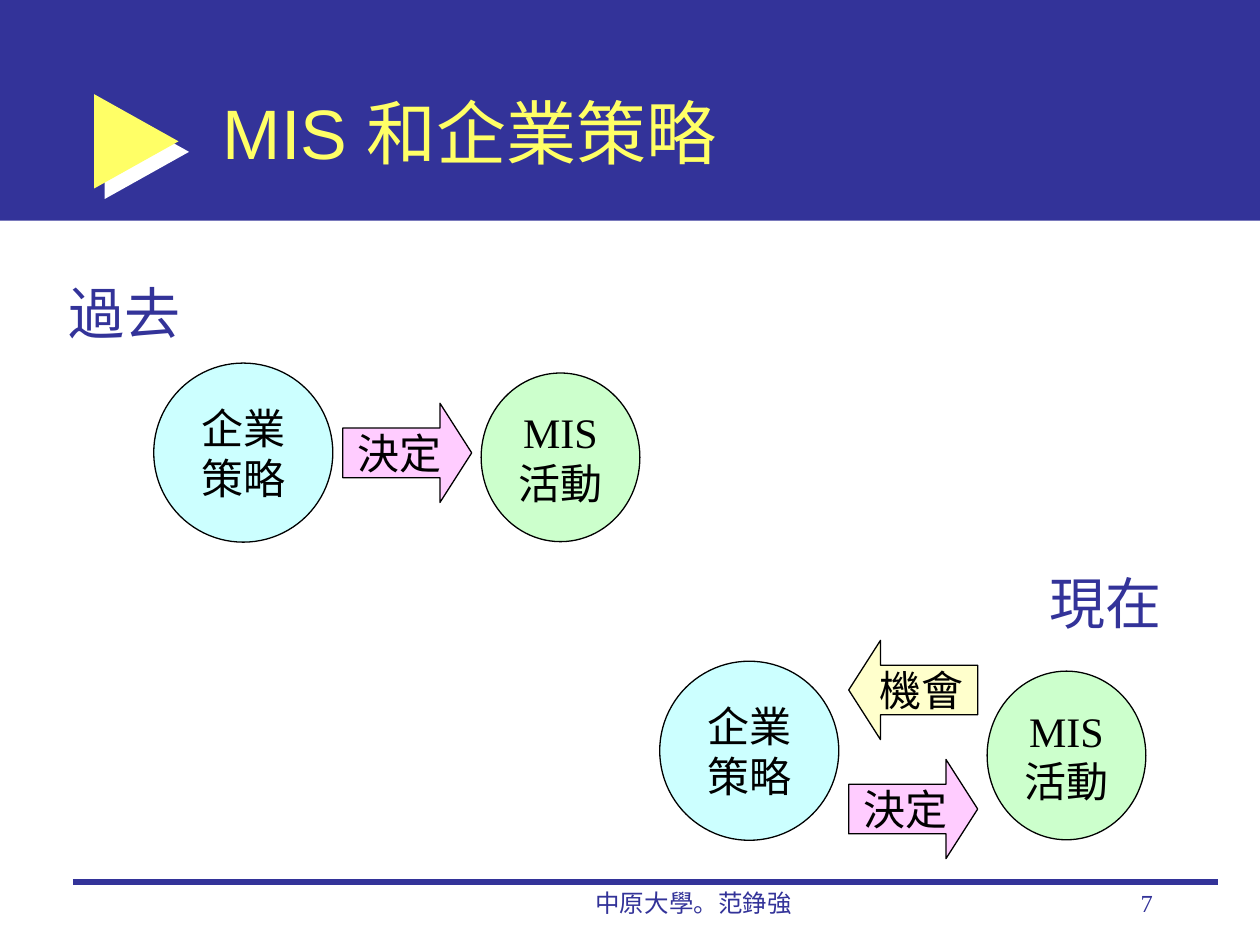
"""Build a slide on how MIS and business strategy relate, past and present."""
import pptx
import pptx.util
import pptx.dml.color
import pptx.enum.shapes
import pptx.enum.text
import pptx.oxml
import pptx.oxml.ns

Cm, Pt = pptx.util.Cm, pptx.util.Pt
Shape = pptx.enum.shapes.MSO_SHAPE
Align = pptx.enum.text.PP_ALIGN
Anchor = pptx.enum.text.MSO_ANCHOR

THEME = {
    "navy": "333399", "gold": "FFFF66", "ink": "000000",
    "sky": "CCFFFF", "mint": "CCFFCC", "pink": "FFCCFF", "cream": "FFFFCC",
    "sans": "Arial", "serif": "Times New Roman",
    "title": 40, "head": 32, "body": 24, "foot": 14,
}

TITLE = "MIS 和企業策略"
HEADS = [("過去", 1.14, 5.49), ("現在", 20.9, 11.33)]
FOOT = [("中原大學。范錚強", 9.96, 8.05, Align.CENTER), ("7", 18.21, 5.28, Align.RIGHT)]
NODES = [
    (["企業", "策略"], "sky", (0, 0, 3.61, 3.61)),
    (["MIS", "活動"], "mint", (6.6, 0.2, 3.2, 3.4)),
]
CAUSE = ("決定", "pink", Shape.RIGHT_ARROW)
CHANCE = ("機會", "cream", Shape.LEFT_ARROW)
SCENES = [
    (3.1, 7.32, [(CAUSE, 0.81)]),
    (13.3, 13.33, [(CAUSE, 1.98), (CHANCE, -0.42)]),
]
SHADE = (
    '<a:outerShdw %s dist="107950" dir="2700000" algn="ctr" rotWithShape="0">'
    '<a:srgbClr val="FFFFFF"/></a:outerShdw>' % pptx.oxml.ns.nsdecls("a")
)


def tint(name):
    return pptx.dml.color.RGBColor.from_string(THEME[name])


def write(shape, lines, size="body", color="ink", font="serif",
          align=Align.LEFT, anchor=Anchor.TOP, wrap=True):
    frame = shape.text_frame
    frame.word_wrap = wrap
    frame.vertical_anchor = anchor
    frame.text = "\n".join(lines)
    for para in frame.paragraphs:
        para.alignment = align
        para.font.size = Pt(THEME[size])
        para.font.name = THEME[font]
        para.font.color.rgb = tint(color)


def draw(slide, kind, box, fill, edge=False):
    shape = slide.shapes.add_shape(kind, *map(Cm, box))
    shape.shadow.inherit = False
    shape.fill.solid()
    shape.fill.fore_color.rgb = tint(fill)
    if edge:
        shape.line.color.rgb = tint("ink")
        shape.line.width = Pt(0.75)
    else:
        shape.line.fill.background()
    return shape


def label(slide, text, box, **style):
    write(slide.shapes.add_textbox(*map(Cm, box)), [text], color="navy", **style)


def frame(slide):
    draw(slide, Shape.RECTANGLE, (0, 0, 25.4, 4.45), "navy")
    mark = draw(slide, Shape.RIGHT_ARROW, (1.9, 1.9, 1.7, 1.9), "gold")
    mark.adjustments[0], mark.adjustments[1] = 0.38, 1
    glow = mark._element.spPr.find(pptx.oxml.ns.qn("a:effectLst"))
    glow.append(pptx.oxml.parse_xml(SHADE))

    ends = map(Cm, (1.47, 17.78, 24.56, 17.78))
    rule = slide.shapes.add_connector(pptx.enum.shapes.MSO_CONNECTOR.STRAIGHT, *ends)
    rule.line.color.rgb = tint("navy")
    rule.line.width = Pt(3)
    pptx.oxml.ns.qn("a:effectLst")
    rule._element.spPr.append(
        pptx.oxml.parse_xml("<a:effectLst %s/>" % pptx.oxml.ns.nsdecls("a")))
    for text, left, width, align in FOOT:
        label(slide, text, (left, 17.78, width, 1.27), size="foot", align=align)


def scene(slide, left, top, arrows):
    style = dict(align=Align.CENTER, anchor=Anchor.MIDDLE, wrap=False)
    for lines, fill, (dx, dy, wide, high) in NODES:
        node = draw(slide, Shape.OVAL, (left + dx, top + dy, wide, high), fill, True)
        write(node, lines, **style)
    for (text, fill, kind), dy in arrows:
        arrow = draw(slide, kind, (left + 3.81, top + dy, 2.6, 2), fill, True)
        arrow.adjustments[0], arrow.adjustments[1] = 0.5, 0.32
        write(arrow, [text], **style)


def main():
    deck = pptx.Presentation()
    deck.slide_width, deck.slide_height = Cm(25.4), Cm(19.05)
    slide = deck.slides.add_slide(deck.slide_layouts[5])
    frame(slide)

    title = slide.shapes.title
    title.left, title.top, title.width, title.height = map(Cm, (4.24, 1.07, 19.25, 3.18))
    write(title, [TITLE], size="title", color="gold", font="sans", anchor=Anchor.MIDDLE)
    slide.shapes._spTree.append(title._element)

    for text, left, top in HEADS:
        label(slide, text, (left, top, 2.95, 1.6), size="head", wrap=False)
    for part in SCENES:
        scene(slide, *part)
    deck.save("out.pptx")


if __name__ == "__main__":
    main()
